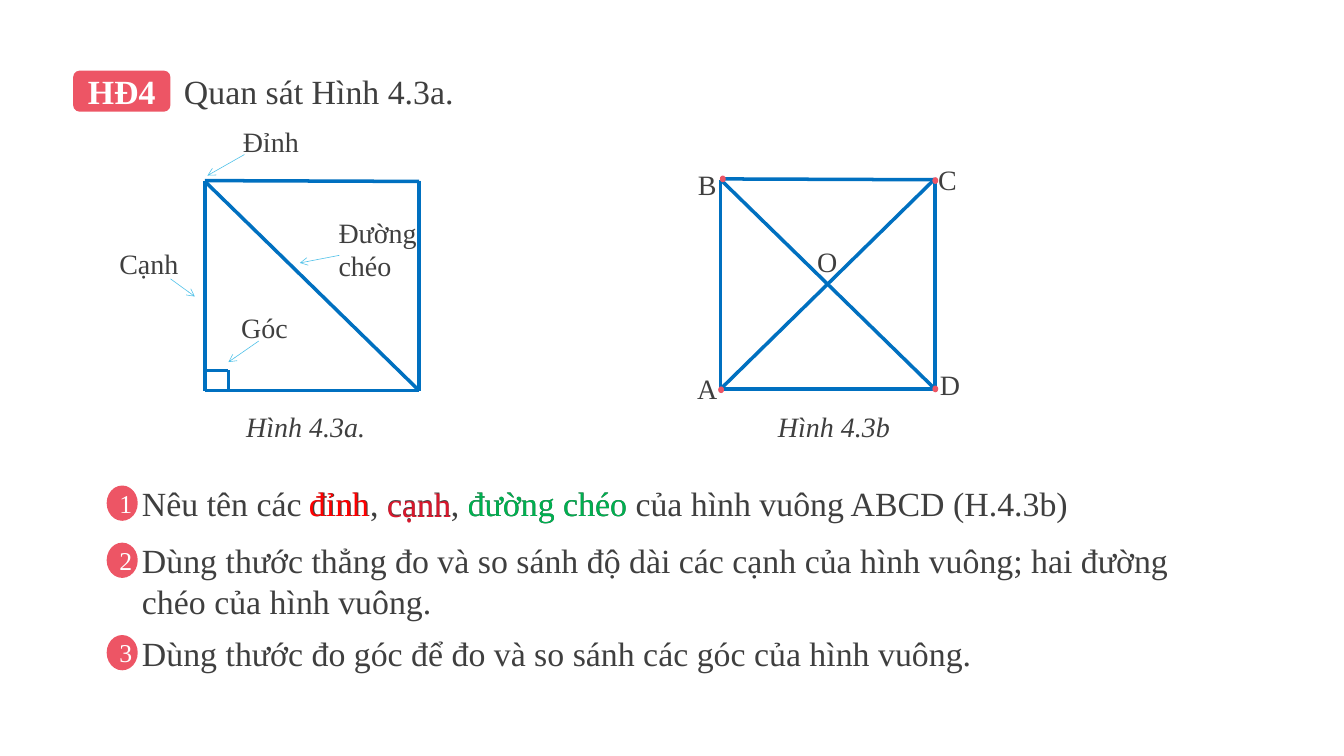
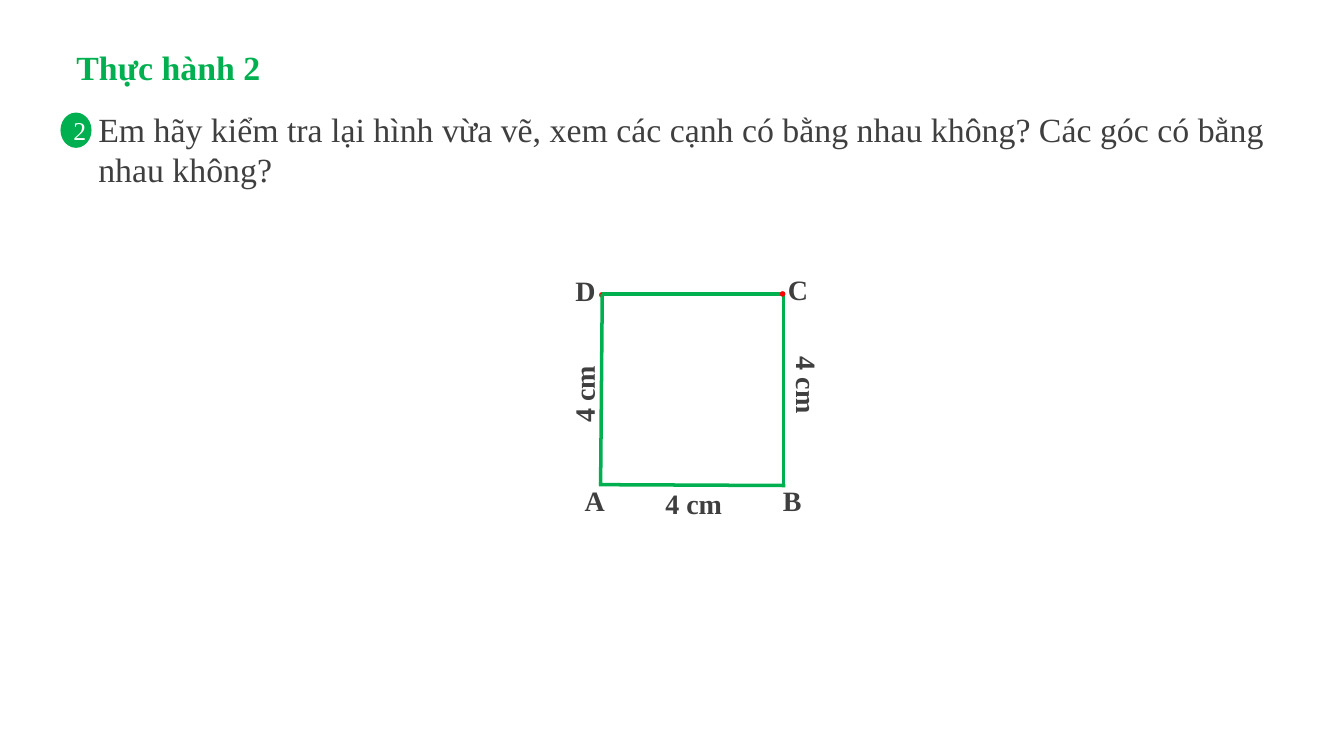
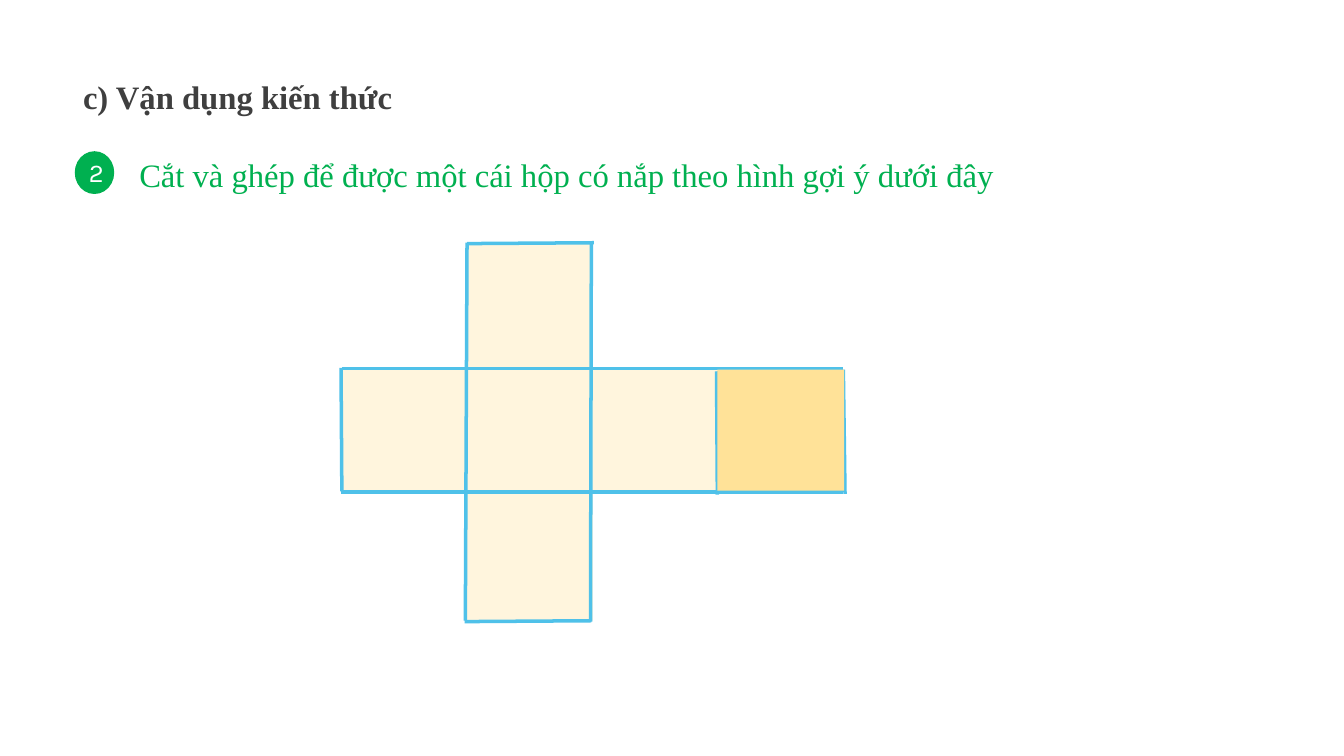
"""Builds three geometry lesson slides about the square and a box net."""
from dataclasses import dataclass
from typing import Iterable, NamedTuple

from lxml.etree import SubElement
from pptx import Presentation
from pptx.dml.color import RGBColor
from pptx.enum.shapes import MSO_AUTO_SHAPE_TYPE as Preset, MSO_CONNECTOR as Connector
from pptx.enum.text import MSO_ANCHOR as Anchor, MSO_AUTO_SIZE as AutoSize, PP_ALIGN as Align
from pptx.oxml.ns import qn
from pptx.shapes.autoshape import Shape
from pptx.slide import Slide
from pptx.util import Inches, Pt


@dataclass(frozen=True)
class Theme:
    """Colours, fonts and type sizes shared by the slides."""
    ink: str = "3F3F3F"
    white: str = "FFFFFF"
    coral: str = "ED5565"
    red: str = "FF0000"
    crimson: str = "DA172C"
    green: str = "00B050"
    blue: str = "0070C0"
    sky: str = "4FC1E9"
    cream: str = "FFF5DD"
    lid: str = "FFE298"
    font: str = "Times New Roman"
    badge_font: str = "Karla"
    dot: int = 40
    body: int = 29
    heading: int = 28
    label: int = 24
    badge: int = 22
    edge: float = 3
    corner: float = 2.25
    pointer: float = 0.5


THEME = Theme()
WIDE = (0.12, 0.06)
TIGHT = (0.1, 0.05)


class Box(NamedTuple):
    """Left, top, width and height in inches."""
    left: float
    top: float
    width: float
    height: float


class Segment(NamedTuple):
    """Start and end of a line in inches."""
    x1: float
    y1: float
    x2: float
    y2: float


@dataclass(frozen=True)
class Style:
    """Look of a one-paragraph text."""
    size: int = THEME.label
    color: str = THEME.ink
    bold: bool = False
    italic: bool = False
    font: str = THEME.font
    inset: tuple[float, float] = WIDE


@dataclass(frozen=True)
class Label:
    """A text with its place and rotation."""
    text: str
    box: Box
    style: Style
    rotation: float = 0


PART = Style()
POINT = Style(inset=TIGHT)
CAPTION = Style(italic=True)
MEASURE = Style(bold=True)
BODY = Style(THEME.body)
TITLE = Style(THEME.body, THEME.green, bold=True)
HEADING = Style(THEME.heading, bold=True, inset=TIGHT)
TASK = Style(THEME.heading, THEME.green, inset=TIGHT)
RED_DOT = Style(THEME.dot, THEME.red, inset=TIGHT)
TAG = Style(THEME.body, THEME.white, bold=True)
NUMBER = Style(THEME.badge, THEME.white, inset=TIGHT)
KARLA_NUMBER = Style(THEME.badge, THEME.white, font=THEME.badge_font, inset=TIGHT)


def write(shape: Shape, text: str, style: Style, align: Align) -> None:
    """Fill a shape with one styled paragraph."""
    frame = shape.text_frame
    frame.word_wrap = True
    frame.margin_left = frame.margin_right = Inches(style.inset[0])
    frame.margin_top = frame.margin_bottom = Inches(style.inset[1])
    paragraph = frame.paragraphs[0]
    paragraph.text = text
    paragraph.alignment = align
    font = paragraph.font
    font.name = style.font
    font.size = Pt(style.size)
    font.bold = style.bold
    font.italic = style.italic
    font.color.rgb = RGBColor.from_string(style.color)


def add_labels(slide: Slide, labels: Iterable[Label]) -> None:
    """Place text boxes."""
    for label in labels:
        holder = slide.shapes.add_textbox(*map(Inches, label.box))
        holder.rotation = label.rotation
        write(holder, label.text, label.style, Align.LEFT)
        holder.text_frame.auto_size = AutoSize.SHAPE_TO_FIT_TEXT


def add_block(slide: Slide, preset: Preset, box: Box, color: str) -> Shape:
    """Place a filled shape without outline."""
    block = slide.shapes.add_shape(preset, *map(Inches, box))
    block.shadow.inherit = False
    block.fill.solid()
    block.fill.fore_color.rgb = RGBColor.from_string(color)
    block.line.fill.background()
    return block


def add_badge(slide: Slide, text: str, box: Box, color: str,
              style: Style = NUMBER, preset: Preset = Preset.OVAL) -> None:
    """Place a filled shape with centred text."""
    badge = add_block(slide, preset, box, color)
    write(badge, text, style, Align.CENTER)
    badge.text_frame.vertical_anchor = Anchor.MIDDLE


def add_lines(slide: Slide, segments: Iterable[Segment], color: str,
              width: float = THEME.edge, arrow: bool = False) -> None:
    """Draw straight lines, with an open arrowhead at the end if asked."""
    for segment in segments:
        stroke = slide.shapes.add_connector(Connector.STRAIGHT, *map(Inches, segment))
        stroke.line.color.rgb = RGBColor.from_string(color)
        stroke.line.width = Pt(width)
        properties = stroke._element.spPr
        if arrow:
            SubElement(properties.find(qn("a:ln")), qn("a:tailEnd"), type="arrow")
        SubElement(properties, qn("a:effectLst"))


def square_with_diagonal(left: float, top: float) -> list[Segment]:
    """Give the four sides and the falling diagonal of a square."""
    right, bottom, start = left + 2.55, top + 2.5, top + 0.01
    return [
        Segment(left, top, right, start),
        Segment(left, start, left, bottom),
        Segment(left, bottom, right, bottom),
        Segment(right, top, right, bottom),
        Segment(left, start, right, bottom),
    ]


def build_observation(slide: Slide) -> None:
    """Name the parts of a square and ask three questions."""
    add_badge(slide, "HĐ4", Box(0.87, 0.84, 1.16, 0.49), THEME.coral, TAG,
              Preset.ROUNDED_RECTANGLE)
    add_labels(slide, [Label("Quan sát Hình 4.3a.", Box(2.07, 0.78, 4.62, 0.61), BODY)])
    add_lines(slide, square_with_diagonal(2.44, 2.15), THEME.blue)
    right_angle = [Segment(2.44, 4.41, 2.72, 4.41), Segment(2.72, 4.41, 2.72, 4.65)]
    add_lines(slide, right_angle, THEME.blue, THEME.corner)
    rising_diagonal = Segment(8.58, 4.63, 11.13, 2.13)
    add_lines(slide, [*square_with_diagonal(8.58, 2.13), rising_diagonal], THEME.blue)
    pointers = [
        Segment(2.91, 1.84, 2.47, 2.09),
        Segment(2.03, 3.32, 2.32, 3.53),
        Segment(4.04, 3.04, 3.57, 3.13),
        Segment(3.08, 4.06, 2.72, 4.31),
    ]
    add_lines(slide, pointers, THEME.sky, THEME.pointer, arrow=True)
    points = [("A", 8.2, 4.37), ("C", 11.07, 1.88), ("D", 11.09, 4.33),
              ("B", 8.21, 1.94), ("O", 9.63, 2.86)]
    add_labels(slide, [Label(name, Box(x, y, 0.59, 0.5), POINT) for name, x, y in points])
    parts = [("Đỉnh", 2.77, 1.42, 0.53), ("Đường chéo", 3.91, 2.5, 0.93),
             ("Cạnh", 1.3, 2.87, 0.53), ("Góc", 2.75, 3.64, 0.53)]
    add_labels(slide, [Label(name, Box(x, y, 1.18, h), PART) for name, x, y, h in parts])
    captions = [("Hình 4.3a.", 2.81), ("Hình 4.3b", 9.14)]
    add_labels(slide, [Label(name, Box(x, 4.82, 2.31, 0.53), CAPTION) for name, x in captions])

    questions = [
        ("Nêu tên các đỉnh, cạnh, đường chéo của hình vuông ABCD (H.4.3b)", 5.69, 11.57, 0.61),
        ("Dùng thước thẳng đo và so sánh độ dài các cạnh của hình vuông; "
         "hai đường chéo của hình vuông.", 6.37, 13.31, 1.1),
        ("Dùng thước đo góc để đo và so sánh các góc của hình vuông.", 7.47, 10.32, 0.61),
    ]
    for number, (question, top, width, height) in enumerate(questions, 1):
        add_labels(slide, [Label(question, Box(1.57, top, width, height), BODY)])
        add_badge(slide, str(number), Box(1.27, top + 0.09, 0.37, 0.42), THEME.coral)

    keywords = [("đỉnh", 3.58, 5.7, 0.99, THEME.red), ("cạnh", 4.51, 5.71, 1.01, THEME.crimson),
                ("đường chéo", 5.47, 5.7, 2.29, THEME.green)]
    add_labels(slide, [
        Label(word, Box(x, y, width, 0.59), Style(THEME.body, color, inset=TIGHT))
        for word, x, y, width, color in keywords
    ])
    for x, y in [(8.55, 4.6), (11.1, 4.59), (8.57, 2.09), (11.1, 2.11)]:
        add_block(slide, Preset.OVAL, Box(x, y, 0.07, 0.08), THEME.coral)


def build_practice(slide: Slide) -> None:
    """Check the sides and angles of a drawn square."""
    corners = [("A", 6.84, 5.7), ("B", 9.2, 5.7), ("C", 9.26, 3.19)]
    add_labels(slide, [
        Label("Thực hành 2", Box(0.79, 0.49, 3.04, 0.61), TITLE),
        Label("Em hãy kiểm tra lại hình vừa vẽ, xem các cạnh có bằng nhau không? "
              "Các góc có bằng nhau không?", Box(1.05, 1.23, 14.37, 1.1), BODY),
        *[Label(name, Box(x, y, 0.53, 0.53), MEASURE) for name, x, y in corners],
    ])
    add_badge(slide, "2", Box(0.72, 1.34, 0.37, 0.42), THEME.green)
    add_labels(slide, [
        Label(".", Box(7, 2.94, 0.33, 0.77), RED_DOT),
        Label("D", Box(6.73, 3.2, 0.53, 0.53), MEASURE),
    ])
    sides = [
        Segment(7.13, 5.77, 9.35, 5.78),
        Segment(9.33, 5.8, 9.33, 3.5),
        Segment(7.15, 5.77, 7.17, 3.5),
        Segment(7.17, 3.5, 9.34, 3.5),
    ]
    add_lines(slide, sides, THEME.green)
    lengths = [(Box(6.24, 4.17, 1.43, 0.53), 270), (Box(8.89, 4.58, 1.43, 0.53), 90),
               (Box(7.8, 5.73, 0.93, 0.53), 0)]
    add_labels(slide, [Label("4 cm", box, MEASURE, turn) for box, turn in lengths])
    add_labels(slide, [Label(".", Box(9.15, 2.92, 0.33, 0.77), RED_DOT)])


def build_box_net(slide: Slide) -> None:
    """Show the net of a box with a lid."""
    for strip in (Box(5.56, 2.89, 1.5, 4.5), Box(4.06, 4.4, 6, 1.44)):
        add_block(slide, Preset.RECTANGLE, strip, THEME.cream)
    add_labels(slide, [Label("c) Vận dụng kiến thức", Box(0.89, 0.87, 4.1, 0.57), HEADING)])
    add_badge(slide, "2", Box(0.89, 1.8, 0.47, 0.51), THEME.green, KARLA_NUMBER)
    add_labels(slide, [Label("Cắt và ghép để được một cái hộp có nắp theo hình gợi ý dưới đây",
                             Box(1.56, 1.8, 12.17, 0.57), TASK)])
    folds = [
        Segment(4.07, 4.39, 10.04, 4.39),
        Segment(4.06, 5.86, 10.03, 5.86),
        Segment(5.56, 2.89, 5.54, 7.39),
        Segment(7.04, 2.9, 7.03, 7.4),
        Segment(4.06, 4.38, 4.07, 5.85),
        Segment(8.53, 4.42, 8.54, 5.89),
        Segment(10.04, 4.4, 10.06, 5.88),
        Segment(5.53, 7.4, 7.04, 7.39),
        Segment(5.56, 2.9, 7.07, 2.89),
    ]
    add_lines(slide, folds, THEME.sky)
    add_block(slide, Preset.RECTANGLE, Box(8.54, 4.4, 1.51, 1.44), THEME.lid)


def main() -> None:
    """Build and save the lesson."""
    lesson = Presentation()
    lesson.slide_width, lesson.slide_height = Inches(16), Inches(9)
    blank = lesson.slide_layouts[6]
    for build in (build_observation, build_practice, build_box_net):
        build(lesson.slides.add_slide(blank))
    lesson.save("out.pptx")


if __name__ == "__main__":
    main()
